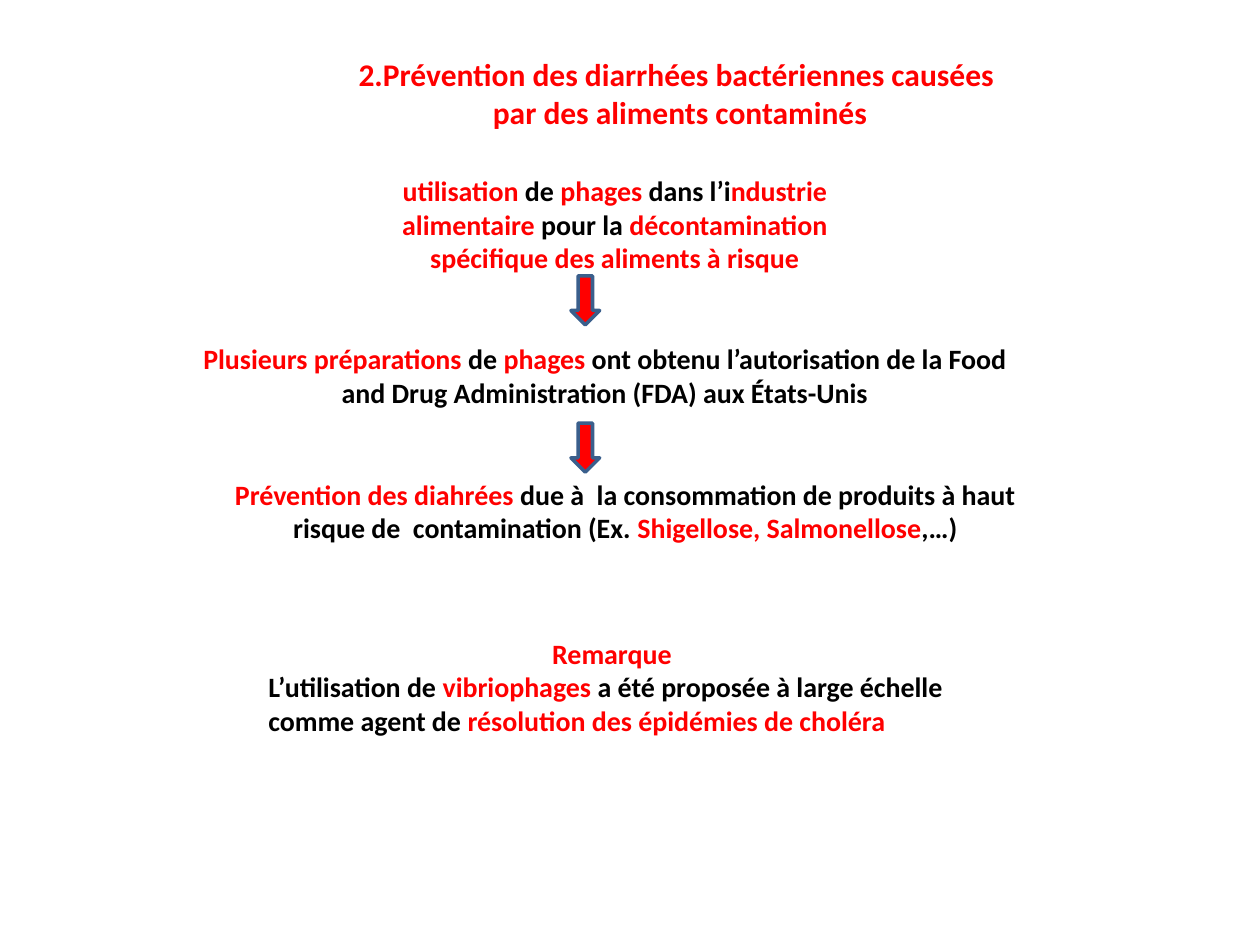
from dataclasses import dataclass

from pptx import Presentation
from pptx.dml.color import RGBColor
from pptx.enum.shapes import MSO_SHAPE
from pptx.enum.text import MSO_AUTO_SIZE, PP_ALIGN
from pptx.util import Cm, Pt

CENTER, LEFT = PP_ALIGN.CENTER, PP_ALIGN.LEFT
DOWN_ARROW = MSO_SHAPE.DOWN_ARROW
GROW = MSO_AUTO_SIZE.SHAPE_TO_FIT_TEXT


@dataclass(frozen=True)
class Theme:
    font: str = "Calibri"
    title: int = 18
    body: int = 16
    ink: RGBColor = RGBColor(0, 0, 0)
    accent: RGBColor = RGBColor(0xFF, 0, 0)
    outline: RGBColor = RGBColor(0x3A, 0x5F, 0x8C)


def write(p, text, *, theme, size, align=CENTER):
    p.alignment = align
    for i, part in enumerate(text.split("*")):
        if part:
            r = p.add_run()
            r.text = part
            r.font.name = theme.font
            r.font.size = Pt(size)
            r.font.bold = True
            r.font.color.rgb = theme.accent if i % 2 else theme.ink


class Page:
    def __init__(self, s, theme):
        self.s = s
        self.theme = theme

    def text(self, x, y, w, h, *lines, size=None, wrap=True):
        sp = self.s.shapes.add_textbox(Cm(x), Cm(y), Cm(w), Cm(h))
        tf = sp.text_frame
        tf.word_wrap = wrap
        tf.auto_size = GROW
        for i, (line, align) in enumerate(lines):
            p = tf.add_paragraph() if i else tf.paragraphs[0]
            write(p, line, theme=self.theme, size=size or self.theme.body, align=align)

    def arrow(self, x, y, w=0.58, h=0.99):
        sp = self.s.shapes.add_shape(DOWN_ARROW, Cm(x), Cm(y), Cm(w), Cm(h))
        sp.shadow.inherit = False
        sp.fill.solid()
        sp.fill.fore_color.rgb = self.theme.accent
        sp.line.color.rgb = self.theme.outline
        sp.line.width = Pt(2)


def main():
    prs = Presentation()
    prs.slide_width, prs.slide_height = Cm(25.4), Cm(19.05)
    theme = Theme()
    page = Page(prs.slides.add_slide(prs.slide_layouts[6]), theme)

    page.text(6.93, 0.99, 13.56, 1.8,
              ("*2.Prévention des diarrhées bactériennes causées *", CENTER),
              ("*par des aliments contaminés*", CENTER),
              size=theme.title, wrap=False)
    page.text(7.34, 3.38, 10.11, 2.31,
              ("*utilisation* de *phages *dans l’i*ndustrie alimentaire*"
               " pour la *décontamination*", CENTER),
              ("*spécifique des aliments à risque*", CENTER))
    page.text(3.76, 6.76, 16.87, 1.63,
              ("*Plusieurs préparations *de *phages* ont obtenu l’autorisation"
               " de la Food and Drug Administration (FDA) aux États-Unis", CENTER))
    page.text(4.17, 9.5, 16.87, 1.63,
              ("*Prévention des diahrées *due à  la consommation de produits à haut"
               " risque de  contamination (Ex. *Shigellose, Salmonellose*,…)", CENTER))
    page.text(5.16, 12.7, 14.48, 2.31,
              ("*Remarque *", CENTER),
              ("L’utilisation de *vibriophages* a été proposée à large échelle"
               " comme agent de *résolution des épidémies de choléra*", LEFT))
    for y in (5.56, 8.53):
        page.arrow(11.51, y)

    prs.save("out.pptx")


if __name__ == "__main__":
    main()
